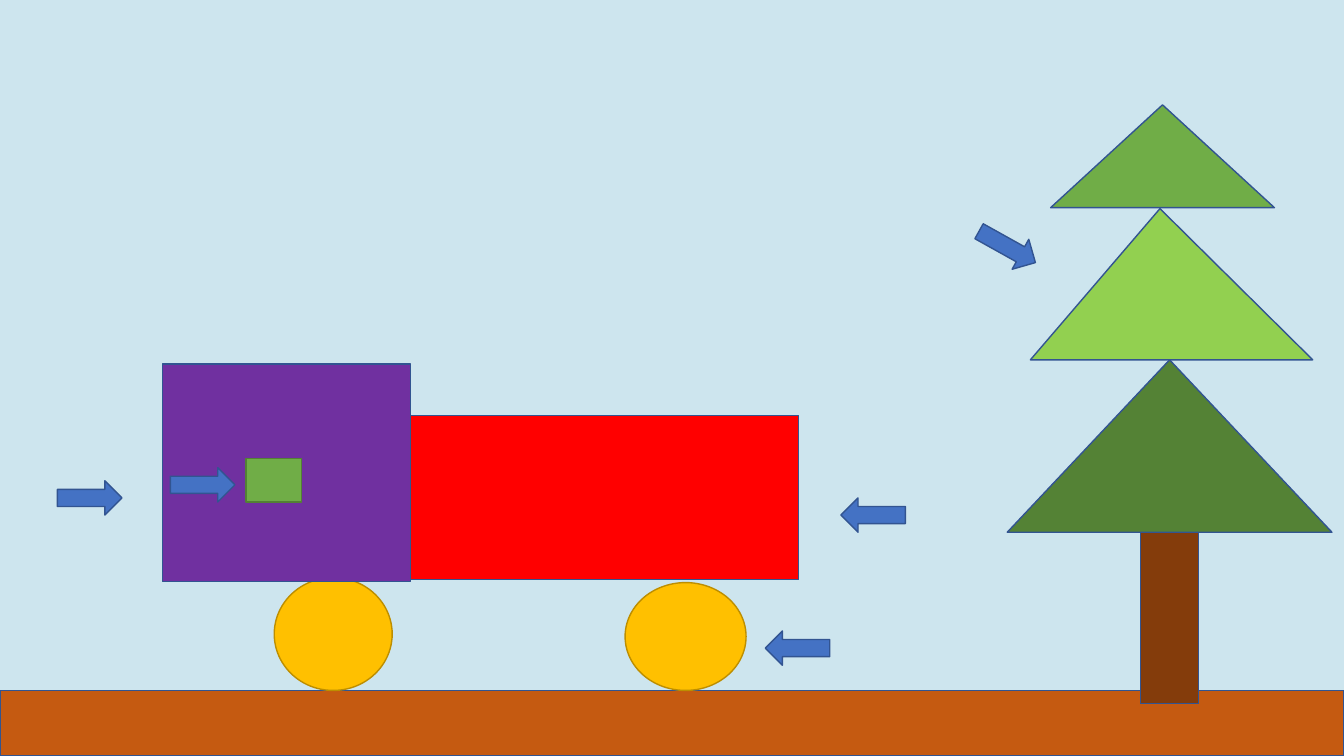
import pptx
import pptx.dml.color
import pptx.enum.shapes
import pptx.util

SHAPES = pptx.enum.shapes.MSO_SHAPE
COLORS = {
    "sky": "CDE5EE",
    "ground": "C55A11",
    "trunk": "843C0B",
    "dark_green": "548235",
    "light_green": "92D050",
    "green": "70AD47",
    "wheel": "FFC000",
    "wheel_outline": "BD8E00",
    "cab": "7030A0",
    "trailer": "FF0000",
    "window_outline": "538035",
    "arrow": "4472C4",
    "outline": "325491",
}


def get_color(name):
    return pptx.dml.color.RGBColor.from_string(COLORS[name])


def add_part(slide, kind, box, fill, outline="outline"):
    shape = slide.shapes.add_shape(kind, *(pptx.util.Inches(length) for length in box))
    shape.shadow.inherit = False
    shape.fill.solid()
    shape.fill.fore_color.rgb = get_color(fill)
    shape.line.color.rgb = get_color(outline)
    shape.line.width = pptx.util.Pt(1)
    return shape


def set_sky(slide):
    fill = slide.background.fill
    fill.solid()
    fill.fore_color.rgb = get_color("sky")


def add_ground(slide, box):
    add_part(slide, SHAPES.RECTANGLE, box, "ground")


def add_tree(slide, left, top):
    add_part(slide, SHAPES.RECTANGLE, (left + 1.32, top + 3.81, 0.58, 2.13), "trunk")
    tiers = [
        (0, 2.53, 3.22, 1.71, "dark_green", 0.5),
        (0.23, 1.03, 2.8, 1.5, "light_green", 0.459),
        (0.43, 0, 2.22, 1.02, "green", 0.5),
    ]
    for x, y, width, height, fill, apex in tiers:
        tier = add_part(slide, SHAPES.ISOSCELES_TRIANGLE, (left + x, top + y, width, height), fill)
        tier.adjustments[0] = apex


def add_truck(slide, left, top):
    parts = [
        (SHAPES.OVAL, 1.11, 2.12, 1.17, 1.12, "wheel", "wheel_outline"),
        (SHAPES.OVAL, 4.59, 2.17, 1.2, 1.07, "wheel", "wheel_outline"),
        (SHAPES.RECTANGLE, 0, 0, 2.46, 2.16, "cab", "outline"),
        (SHAPES.RECTANGLE, 2.46, 0.51, 3.85, 1.63, "trailer", "outline"),
        (SHAPES.RECTANGLE, 0.83, 0.94, 0.55, 0.43, "green", "window_outline"),
    ]
    for kind, x, y, width, height, fill, outline in parts:
        add_part(slide, kind, (left + x, top + y, width, height), fill, outline)


def add_arrows(slide):
    arrows = [
        (SHAPES.LEFT_ARROW, 8.34, 4.94, 0),
        (SHAPES.RIGHT_ARROW, 0.57, 4.77, 0),
        (SHAPES.RIGHT_ARROW, 1.69, 4.64, 0),
        (SHAPES.LEFT_ARROW, 7.59, 6.26, 0),
        (SHAPES.RIGHT_ARROW, 9.67, 2.28, 29.1),
    ]
    for kind, left, top, angle in arrows:
        arrow = add_part(slide, kind, (left, top, 0.64, 0.34), "arrow")
        arrow.rotation = angle


def main():
    presentation = pptx.Presentation()
    presentation.slide_width = pptx.util.Inches(13.33)
    presentation.slide_height = pptx.util.Inches(7.5)
    slide = presentation.slides.add_slide(presentation.slide_layouts[6])
    set_sky(slide)
    add_ground(slide, (0, 6.85, 13.33, 0.65))
    add_tree(slide, 9.99, 1.04)
    add_truck(slide, 1.61, 3.61)
    add_arrows(slide)
    presentation.save("out.pptx")


if __name__ == "__main__":
    main()
